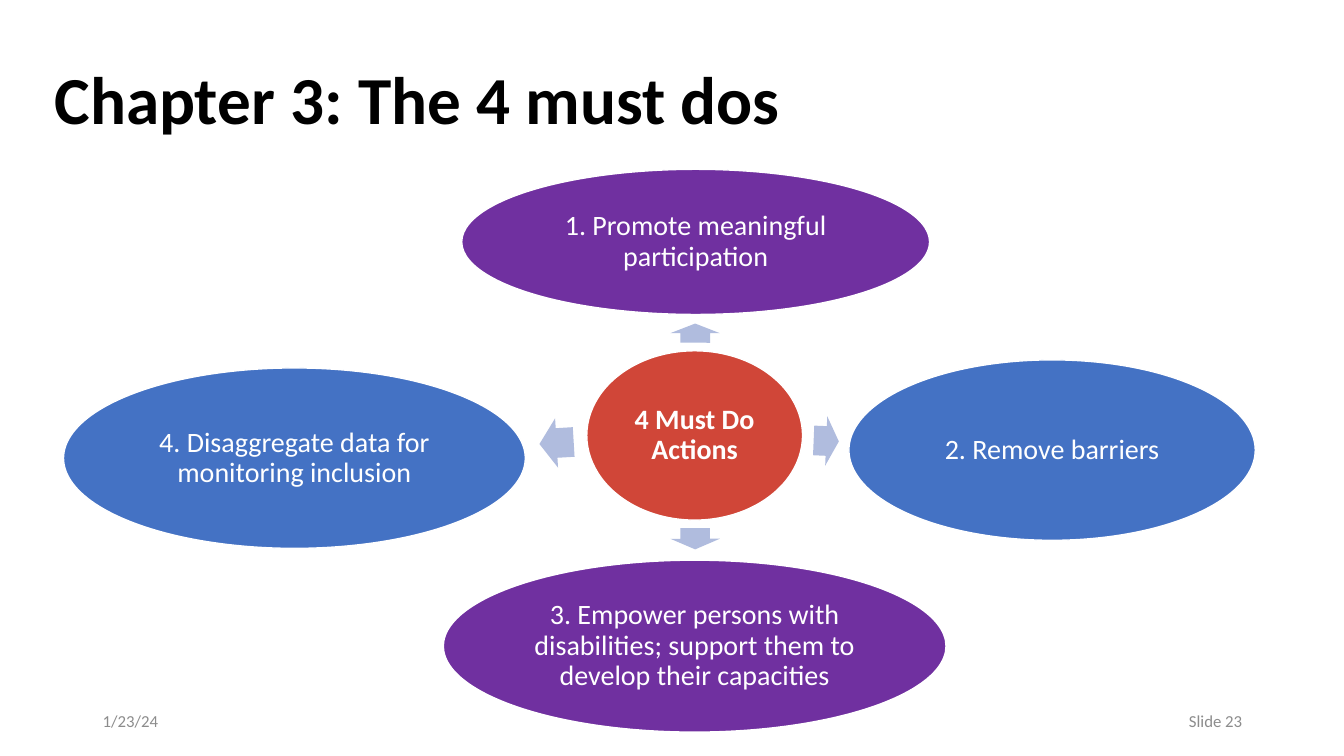
import pptx
import pptx.util
import pptx.dml.color
import pptx.enum.shapes
import pptx.enum.text

Inches = pptx.util.Inches
Pt = pptx.util.Pt
Align = pptx.enum.text.PP_ALIGN
Shape = pptx.enum.shapes.MSO_SHAPE


def color(hex_code):
    return pptx.dml.color.RGBColor.from_string(hex_code)


class SlideBuilder:
    font = "Calibri"
    white = "FFFFFF"
    arrow_fill = "B0BCDE"
    footer_gray = "8C8C8C"

    def __init__(self, slide):
        self.slide = slide

    def set_text(self, frame, text, size, ink, align, bold=False, spacing=None):
        frame.word_wrap = True
        frame.vertical_anchor = pptx.enum.text.MSO_ANCHOR.MIDDLE
        frame.text = text
        paragraph = frame.paragraphs[0]
        paragraph.alignment = align
        paragraph.line_spacing = spacing
        paragraph.font.name = self.font
        paragraph.font.size = Pt(size)
        paragraph.font.bold = bold
        paragraph.font.color.rgb = color(ink)

    def title(self, text, left, top, width, height):
        heading = self.slide.shapes.title
        heading.left, heading.top = Inches(left), Inches(top)
        heading.width, heading.height = Inches(width), Inches(height)
        self.set_text(heading.text_frame, text, 48, "000000", Align.LEFT, True, 0.9)

    def footer(self, text, left, align):
        box = self.slide.shapes.add_textbox(
            Inches(left), Inches(6.95), Inches(3), Inches(0.4))
        self.set_text(box.text_frame, text, 12, self.footer_gray, align)

    def preset(self, kind, left, top, width, height, fill):
        shape = self.slide.shapes.add_shape(
            kind, Inches(left), Inches(top), Inches(width), Inches(height))
        shape.shadow.inherit = False
        shape.fill.solid()
        shape.fill.fore_color.rgb = color(fill)
        return shape

    def ellipse(self, text, box, fill, bold=False, border=1, inset=0.03):
        oval = self.preset(Shape.OVAL, *box, fill)
        oval.line.color.rgb = color(self.white)
        oval.line.width = Pt(border)
        frame = oval.text_frame
        frame.margin_left = frame.margin_right = Inches(inset)
        frame.margin_top = frame.margin_bottom = Inches(inset)
        self.set_text(frame, text, 20, self.white, Align.CENTER, bold, 0.9)

    def arrow(self, left, top, length, rotation):
        pointer = self.preset(
            Shape.RIGHT_ARROW, left, top, length, 0.49, self.arrow_fill)
        pointer.line.fill.background()
        pointer.adjustments[0] = 0.6
        pointer.adjustments[1] = 0.5
        pointer.rotation = rotation


def main():
    deck = pptx.Presentation()
    deck.slide_width, deck.slide_height = Inches(13.33), Inches(7.5)
    builder = SlideBuilder(deck.slides.add_slide(deck.slide_layouts[5]))
    red, purple, blue = "D04638", "7030A0", "4472C4"

    builder.title("Chapter 3: The 4 must dos", 0.44, 0.29, 9.07, 1.45)
    builder.footer("1/23/24", 0.92, Align.LEFT)
    builder.footer("Slide 23", 9.42, Align.RIGHT)

    builder.ellipse("4 Must Do Actions", (5.82, 3.48, 2.14, 1.68), red, bold=True)
    for direction in [
        (6.8, 3.06, 0.19, 270.1),
        (8.07, 4.13, 0.25, 2.4),
        (6.79, 5.1, 0.21, 89.9),
        (5.35, 4.15, 0.34, 176.6),
    ]:
        builder.arrow(*direction)

    builder.ellipse("1. Promote meaningful participation",
                    (4.58, 1.68, 4.64, 1.44), purple)
    builder.ellipse("2. Remove barriers", (8.42, 3.57, 4.03, 1.79), blue)
    builder.ellipse("3. Empower persons with disabilities; support them to "
                    "develop their capacities",
                    (4.39, 5.55, 5, 1.72), purple, border=2, inset=0.01)
    builder.ellipse("4. Disaggregate data for monitoring inclusion",
                    (0.63, 3.65, 4.58, 1.79), blue)

    deck.save("out.pptx")


if __name__ == "__main__":
    main()
